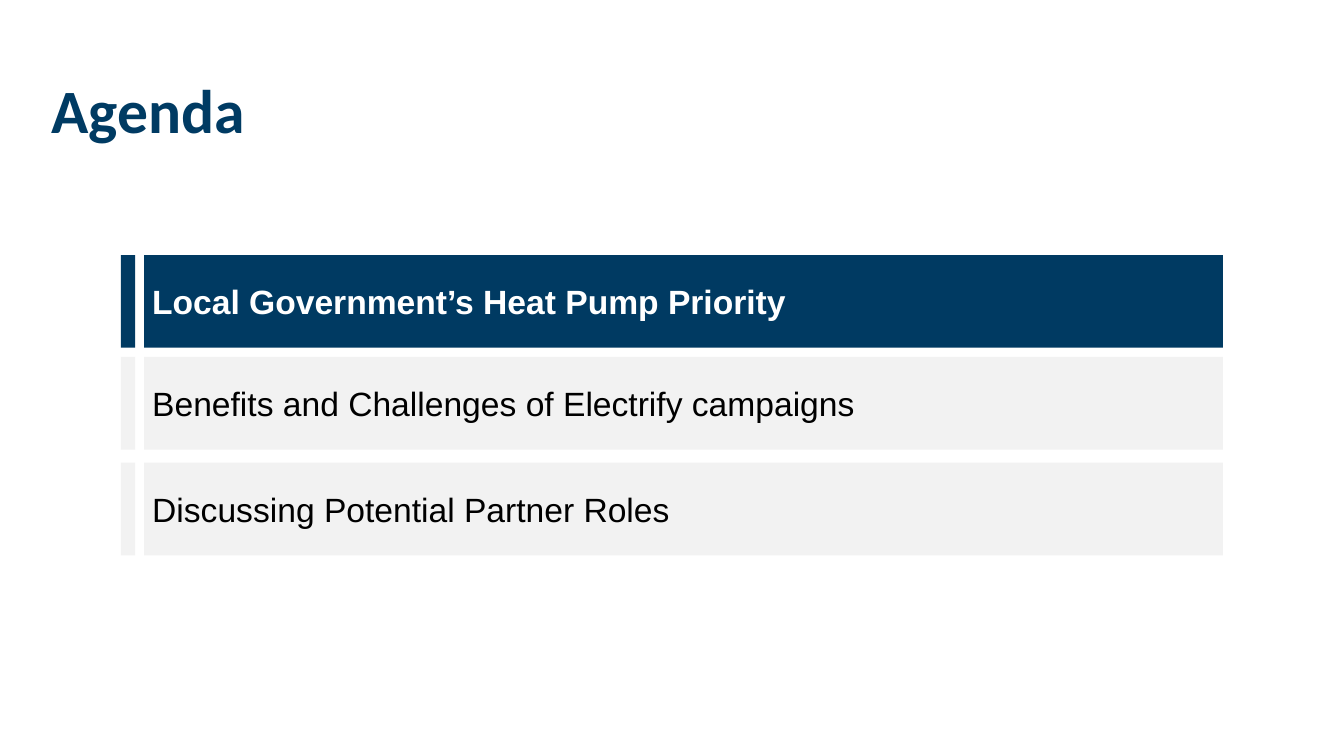
import pptx
import pptx.util
import pptx.dml.color
import pptx.enum.shapes
import pptx.enum.text

Inches = pptx.util.Inches

COLORS = {
    "title": "003B63",
    "active": "003A62",
    "idle": "F2F2F2",
    "active_text": "FFFFFF",
    "idle_text": "000000",
}
ROW_LEFT, ROW_WIDTH, ROW_HEIGHT = 1.2, 10.93, 0.92
MARKER_WIDTH, MARKER_GAP = 0.14, 0.09
AGENDA = [
    (2.53, "Local Government’s Heat Pump Priority", True),
    (3.54, "Benefits and Challenges of Electrify campaigns", False),
    (4.59, "Discussing Potential Partner Roles", False),
]


def color(name):
    return pptx.dml.color.RGBColor.from_string(COLORS[name])


def write(shape, text, font, size, color_name, bold):
    """Fill a shape with one left-aligned, vertically centred line."""
    frame = shape.text_frame
    frame.word_wrap = True
    frame.vertical_anchor = pptx.enum.text.MSO_ANCHOR.MIDDLE
    para = frame.paragraphs[0]
    para.text = text
    para.alignment = pptx.enum.text.PP_ALIGN.LEFT
    span = para.runs[0]
    span.font.name = font
    span.font.size = pptx.util.Pt(size)
    span.font.bold = bold
    span.font.color.rgb = color(color_name)
    return para


def add_title(page, left, top, width, height):
    box = page.shapes.add_textbox(
        Inches(left), Inches(top), Inches(width), Inches(height))
    para = write(box, "Agenda", "Calibri", 44, "title", True)
    para.line_spacing = 0.9


def add_bar(shapes, left, top, width, height, fill):
    bar = shapes.add_shape(
        pptx.enum.shapes.MSO_SHAPE.RECTANGLE,
        Inches(left), Inches(top), Inches(width), Inches(height))
    bar.shadow.inherit = False
    bar.fill.solid()
    bar.fill.fore_color.rgb = color(fill)
    bar.line.fill.background()
    return bar


def add_agenda_row(page, left, top, width, height, text, active):
    """Group a narrow marker with its text bar; the active row stands out."""
    state = "active" if active else "idle"
    shapes = page.shapes.add_group_shape().shapes
    add_bar(shapes, left, top, MARKER_WIDTH, height, state)
    offset = MARKER_WIDTH + MARKER_GAP
    bar = add_bar(shapes, left + offset, top, width - offset, height, state)
    frame = bar.text_frame
    frame.margin_left = frame.margin_right = Inches(0.08)
    frame.margin_top = frame.margin_bottom = 0
    write(bar, text, "Arial", 24, state + "_text", active)


def main():
    deck = pptx.Presentation()
    deck.slide_width, deck.slide_height = Inches(13.33), Inches(7.5)
    page = deck.slides.add_slide(deck.slide_layouts[6])
    add_title(page, 0.41, 0.4, 12.53, 1.45)
    for top, text, active in AGENDA:
        add_agenda_row(page, ROW_LEFT, top, ROW_WIDTH, ROW_HEIGHT, text, active)
    deck.save("out.pptx")


if __name__ == "__main__":
    main()
